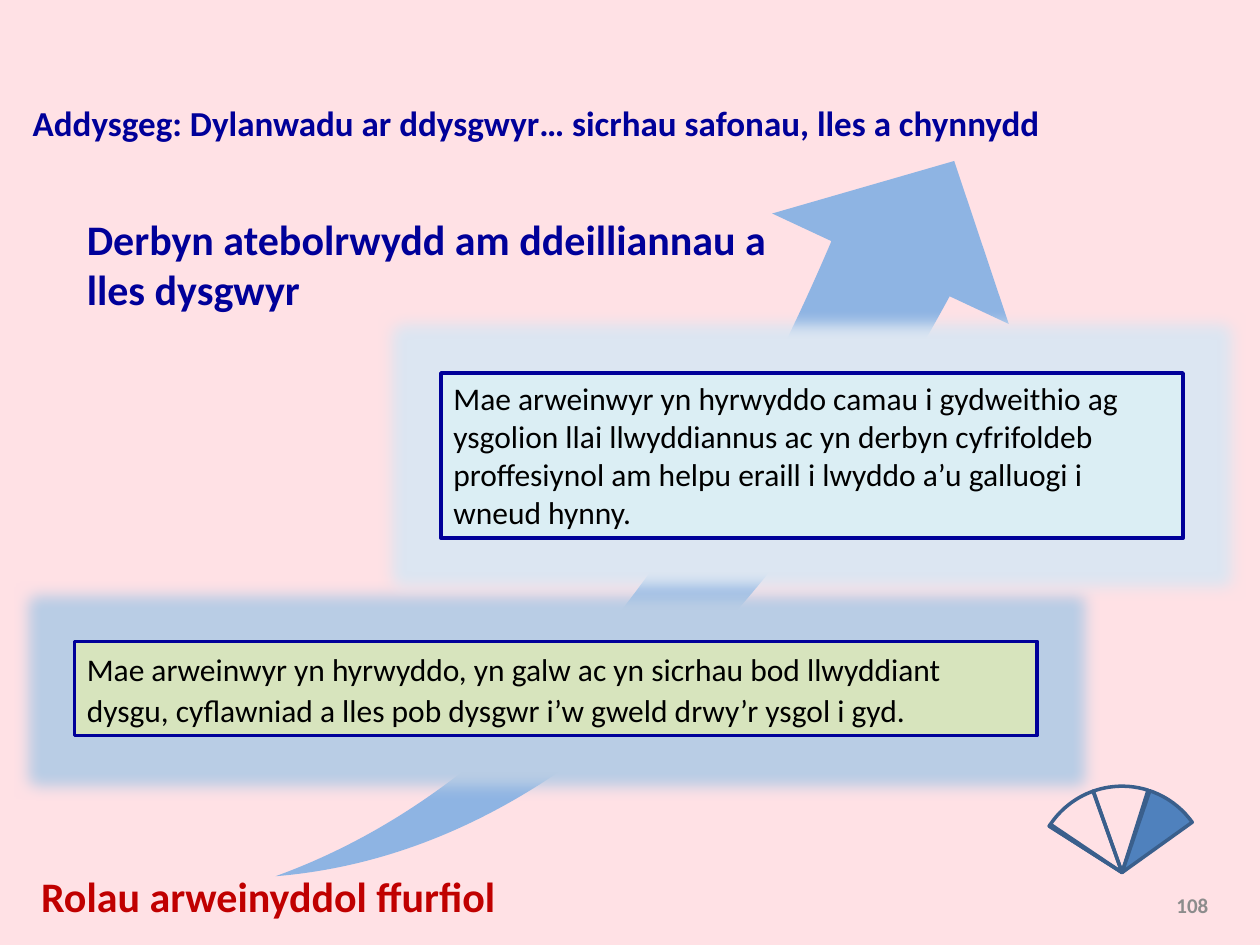
from lxml.etree import SubElement
from pptx import Presentation
from pptx.dml.color import RGBColor
from pptx.enum.shapes import MSO_SHAPE as Shape
from pptx.enum.text import MSO_ANCHOR as Anchor, MSO_AUTO_SIZE as AutoSize, PP_ALIGN as Align
from pptx.oxml.ns import qn
from pptx.util import Cm, Pt

NAVY, RED, GREY, BLACK = "000099", "C00000", "8C8C8C", "000000"


def color(hex_code):
    return RGBColor.from_string(hex_code)


def write(box, lines, size, hex_code, bold=True):
    frame = box.text_frame
    frame.word_wrap = True
    frame.auto_size = AutoSize.SHAPE_TO_FIT_TEXT
    frame.vertical_anchor = Anchor.TOP
    for index, line in enumerate(lines):
        para = frame.add_paragraph() if index else frame.paragraphs[0]
        para.alignment = Align.LEFT
        span = para.add_run()
        span.text = line
        span.font.name = "Calibri"
        span.font.size = Pt(size)
        span.font.bold = bold
        span.font.color.rgb = color(hex_code)
    return frame


deck = Presentation()
deck.slide_width, deck.slide_height = Cm(25.4), Cm(19.05)
page = deck.slides.add_slide(deck.slide_layouts[6])
page.background.fill.solid()
page.background.fill.fore_color.rgb = color("FFE1E5")

# Rising arrow behind the text
arrow = page.shapes.add_shape(Shape.SWOOSH_ARROW, Cm(4.37), Cm(5.56), Cm(18.03), Cm(10.46))
arrow.adjustments[0] = arrow.adjustments[1] = 0.25
arrow.rotation = 288.6
arrow._element.spPr.find(qn("a:xfrm")).set("flipV", "1")
arrow.shadow.inherit = False
arrow.fill.solid()
arrow.fill.fore_color.rgb = color("8EB4E3")
arrow.line.fill.background()

# Headings and footer label
headings = [
    (0.41, 1.93, 22.91, 1.12, 20, NAVY,
     ["Addysgeg: Dylanwadu ar ddysgwyr… sicrhau safonau, lles a chynnydd"]),
    (1.5, 4.17, 15.77, 2.31, 24, NAVY,
     ["Derbyn atebolrwydd am ddeilliannau a", "lles dysgwyr"]),
    (0.58, 17.42, 11.91, 1.27, 24, RED, ["Rolau arweinyddol ffurfiol"]),
]
for left, top, width, height, size, hex_code, lines in headings:
    box = page.shapes.add_textbox(Cm(left), Cm(top), Cm(width), Cm(height))
    write(box, lines, size, hex_code)

# Statement boxes with a glow
statements = [
    (1.5, 12.93, 19.41, 1.9, "D7E4BD", "B9CDE5", 1.07, 8,
     "Mae arweinwyr yn hyrwyddo, yn galw ac yn sicrhau bod llwyddiant dysgu, "
     "cyflawniad a lles pob dysgwr i’w gweld drwy’r ysgol i gyd."),
    (8.89, 7.52, 14.96, 3.33, "DBEEF4", "DCE6F2", 1.0, 0,
     "Mae arweinwyr yn hyrwyddo camau i gydweithio ag ysgolion llai llwyddiannus "
     "ac yn derbyn cyfrifoldeb proffesiynol am helpu eraill i lwyddo a’u galluogi "
     "i wneud hynny."),
]
for left, top, width, height, fill, glow_hex, spacing, after, text in statements:
    box = page.shapes.add_shape(Shape.RECTANGLE, Cm(left), Cm(top), Cm(width), Cm(height))
    box.shadow.inherit = False
    box.fill.solid()
    box.fill.fore_color.rgb = color(fill)
    box.line.color.rgb = color(NAVY)
    box.line.width = Pt(2)
    effects = box._element.spPr.find(qn("a:effectLst"))
    glow = SubElement(effects, qn("a:glow"), rad=str(Pt(18)))
    SubElement(glow, qn("a:srgbClr"), val=glow_hex)
    para = write(box, [text], 18, BLACK, bold=False).paragraphs[0]
    para.line_spacing = spacing
    para.space_after = Pt(after)

# Slide number
box = page.shapes.add_textbox(Cm(18.69), Cm(17.73), Cm(5.92), Cm(1.02))
frame = write(box, ["108"], 12, GREY)
frame.auto_size = AutoSize.NONE
frame.vertical_anchor = Anchor.MIDDLE
frame.paragraphs[0].alignment = Align.RIGHT

# Fan of pie segments: start and end angle in degrees, last one filled
fan = page.shapes.add_group_shape()
segments = [(161.56, 162.84), (161.36, 199.46), (199.28, 236.43), (237.68, 273.28)]
for index, angles in enumerate(segments):
    segment = fan.shapes.add_shape(Shape.PIE, Cm(20.88), Cm(15.85), Cm(3.48), Cm(3.48))
    for position, angle in enumerate(angles):
        segment.adjustments[position] = angle * 0.6
    segment.rotation = 51.1
    segment.shadow.inherit = False
    segment.line.color.rgb = color("3A5F8C")
    segment.line.width = Pt(2)
    if index == len(segments) - 1:
        segment.fill.solid()
        segment.fill.fore_color.rgb = color("4F81BD")
    else:
        segment.fill.background()

deck.save("out.pptx")
